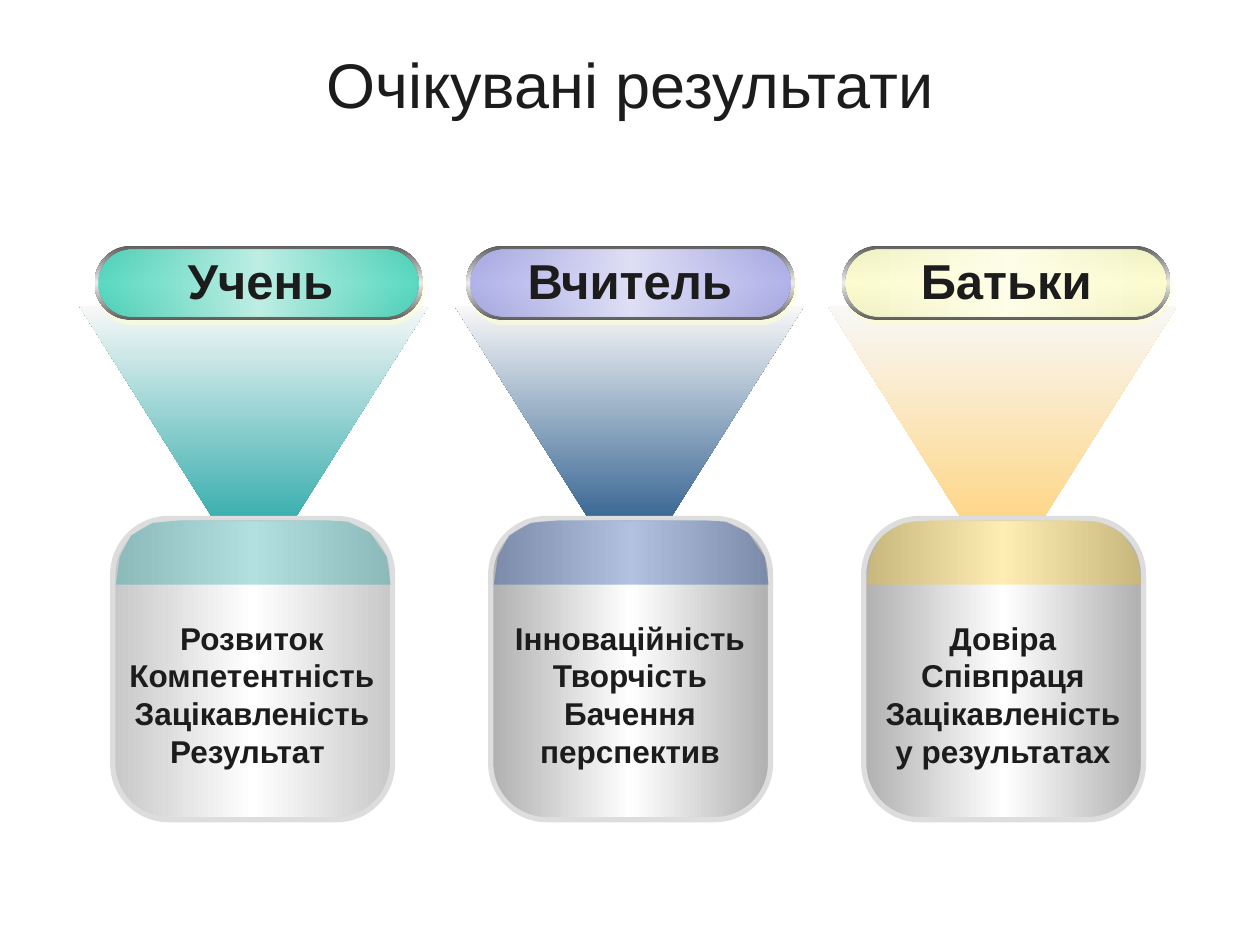
from lxml.etree import SubElement
from pptx import Presentation
from pptx.dml.color import RGBColor
from pptx.enum.shapes import MSO_SHAPE
from pptx.enum.text import MSO_ANCHOR, MSO_AUTO_SIZE, PP_ALIGN
from pptx.oxml.ns import qn
from pptx.util import Inches, Pt

TITLE = "Очікувані результати"
INK = "1C1C1C"
COLUMNS = [
    {"label": "Учень", "label_left": 1.39, "label_width": 1.37,
     "beam": "009898", "cap": "009898", "edge": "C8C8C8", "badge": ("4BD9BE", "C0EFE5"),
     "beam_left": 0.63, "card_left": 0.9, "badge_left": 0.75, "text_height": 1.31,
     "lines": ["Розвиток", "Компетентність", "Зацікавленість", "Результат "]},
    {"label": "Вчитель", "label_left": 4.09, "label_width": 1.84,
     "beam": "003B76", "cap": "003399", "edge": "B0B0B0", "badge": ("ACAEEC", "E0E0F6"),
     "beam_left": 3.61, "card_left": 3.9, "badge_left": 3.7, "text_height": 1.92,
     "lines": ["Інноваційність", "Творчість", "Бачення перспектив"]},
    {"label": "Батьки", "label_left": 7.21, "label_width": 1.58,
     "beam": "FFCC66", "cap": "FCC705", "edge": "B0B0B0", "badge": ("FFFFCC", "FFFFEA"),
     "beam_left": 6.57, "card_left": 6.86, "badge_left": 6.68, "text_height": 1.31,
     "lines": ["Довіра", "Співпраця", "Зацікавленість у результатах"]},
]
CAP_OUTLINE = [
    (0.02, 4.64), (0.05, 4.42), (0.14, 4.25), (0.31, 4.15), (0.53, 4.13),
    (1.7, 4.13), (1.86, 4.14), (2.04, 4.23), (2.17, 4.42), (2.2, 4.64),
]


def color(value):
    return RGBColor.from_string(value)


def add_color(parent, value, opacity=100):
    node = SubElement(parent, qn("a:srgbClr"), val=value)
    if opacity < 100:
        SubElement(node, qn("a:alpha"), val=str(opacity * 1000))


def fill_gradient(shape, stops, angle):
    shape.fill.gradient()
    gradient = shape.element.spPr.find(qn("a:gradFill"))
    gradient.set("rotWithShape", "1")
    for child in list(gradient):
        gradient.remove(child)
    stop_list = SubElement(gradient, qn("a:gsLst"))
    for position, value, opacity in stops:
        stop = SubElement(stop_list, qn("a:gs"), pos=str(position * 1000))
        add_color(stop, value, opacity)
    SubElement(gradient, qn("a:lin"), ang=str(angle * 60000), scaled="0")


def mirrored(edge, middle, opacity=100):
    return [(0, edge, opacity), (50, middle, 100), (100, edge, opacity)]


def add_shape(shapes, kind, left, top, width, height, stops, angle=90, rotation=0, corner=0.5):
    shape = shapes.add_shape(kind, Inches(left), Inches(top), Inches(width), Inches(height))
    shape.shadow.inherit = False
    shape.rotation = rotation
    shape.adjustments[0] = corner
    shape.line.fill.background()
    fill_gradient(shape, stops, angle)
    return shape


def write(frame, lines, size, bold=False, align=PP_ALIGN.CENTER):
    for index, line in enumerate(lines):
        para = frame.paragraphs[0] if index == 0 else frame.add_paragraph()
        para.alignment = align
        span = para.add_run()
        span.text = line
        span.font.name = "Arial"
        span.font.size = Pt(size)
        span.font.bold = bold
        span.font.color.rgb = color(INK)


def add_text(page, left, top, width, height, lines, size, wrap=True, align=PP_ALIGN.CENTER):
    box = page.shapes.add_textbox(Inches(left), Inches(top), Inches(width), Inches(height))
    box.text_frame.word_wrap = wrap
    box.text_frame.auto_size = MSO_AUTO_SIZE.SHAPE_TO_FIT_TEXT
    write(box.text_frame, lines, size, bold=True, align=align)


def add_cap(page, left, value):
    points = [(Inches(left + x), Inches(y)) for x, y in CAP_OUTLINE]
    builder = page.shapes.build_freeform(*points[0])
    builder.add_line_segments(points[1:], close=True)
    cap = builder.convert_to_shape()
    cap.shadow.inherit = False
    cap.line.fill.background()
    cap.fill.solid()
    cap.fill.fore_color.rgb = color(value)
    node = cap.element.spPr.find(qn("a:solidFill")).find(qn("a:srgbClr"))
    SubElement(node, qn("a:alpha"), val="30000")


def add_badge(page, column):
    left = column["badge_left"]
    group = page.shapes.add_group_shape()
    rim = add_shape(group.shapes, MSO_SHAPE.ROUNDED_RECTANGLE, left, 1.95, 2.61, 0.59,
                    mirrored("5E5E5E", "EAEAEA"))
    effects = rim.element.spPr.find(qn("a:effectLst"))
    shadow = SubElement(effects, qn("a:outerShdw"), blurRad="0", dist=str(Pt(3.2)),
                        dir=str(72 * 60000), algn="ctr", rotWithShape="0")
    add_color(shadow, "FFFFCC", 50)
    add_shape(group.shapes, MSO_SHAPE.ROUNDED_RECTANGLE, left + 0.035, 1.98, 2.54, 0.53,
              mirrored(*column["badge"], opacity=90), angle=0)
    add_text(page, column["label_left"], 1.94, column["label_width"], 0.57,
             [column["label"]], 28, wrap=False, align=PP_ALIGN.LEFT)


def add_card(page, column):
    add_shape(page.shapes, MSO_SHAPE.ISOSCELES_TRIANGLE, column["beam_left"], 2.43, 2.77, 2.2,
              [(0, column["beam"], 100), (100, "F8F8F8", 100)], rotation=180)
    left = column["card_left"]
    card = add_shape(page.shapes, MSO_SHAPE.ROUNDED_RECTANGLE, left - 0.09, 4.2, 2.39, 2.22,
                     mirrored(column["edge"], "FFFFFF"), rotation=90, corner=0.2)
    card.line.color.rgb = color("DDDDDD")
    card.line.width = Pt(3)
    add_cap(page, left, column["cap"])
    add_text(page, left, 4.86, 2.2, column["text_height"], column["lines"], 18)


def main():
    deck = Presentation()
    deck.slide_width, deck.slide_height = Inches(10), Inches(7.5)
    page = deck.slides.add_slide(deck.slide_layouts[5])
    title = page.shapes.title
    title.left, title.top = Inches(0), Inches(0.25)
    title.width, title.height = Inches(10), Inches(0.83)
    title.text_frame.vertical_anchor = MSO_ANCHOR.MIDDLE
    write(title.text_frame, [TITLE], 36)
    for column in COLUMNS:
        add_card(page, column)
    for column in COLUMNS:
        add_badge(page, column)
    deck.save("out.pptx")


if __name__ == "__main__":
    main()
